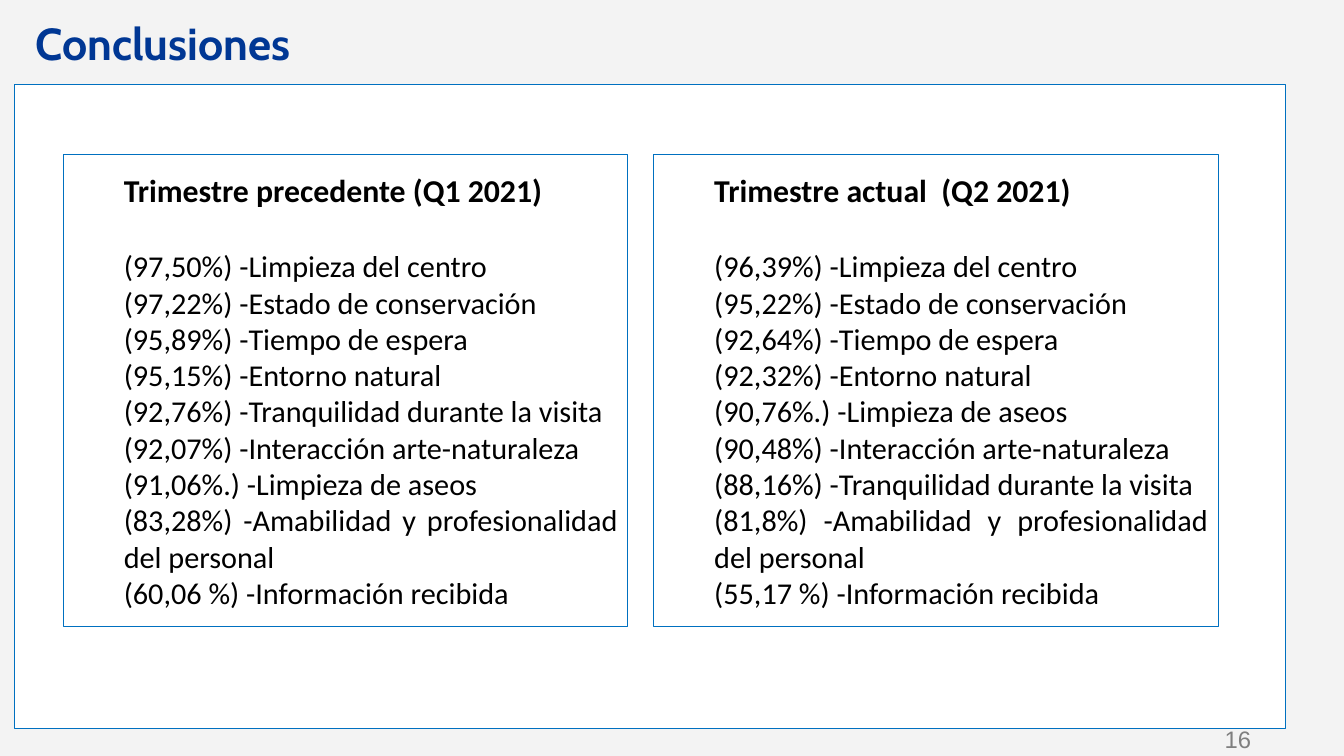
from dataclasses import dataclass

from pptx import Presentation
from pptx import util as u
from pptx.dml.color import RGBColor
from pptx.enum import shapes, text

BACKGROUND = RGBColor(0xF3, 0xF3, 0xF3)
WHITE = RGBColor(0xFF, 0xFF, 0xFF)
BLACK = RGBColor(0, 0, 0)
GRAY = RGBColor(0x7F, 0x7F, 0x7F)
TITLE_BLUE = RGBColor(0x00, 0x37, 0x94)
BORDER_BLUE = RGBColor(0x00, 0x70, 0xC0)

CARD_LEFT, CARD_TOP = 1.6, 3.89
CARD_WIDTH, CARD_HEIGHT = 14.22, 11.89
CARD_PITCH = 14.88
TEXT_INDENT = u.Cm(1.27)


@dataclass
class Quarter:
    heading: str
    results: list[tuple[str, str]]


QUARTERS = [
    Quarter("Trimestre precedente (Q1 2021)", [
        ("97,50%", "Limpieza del centro"),
        ("97,22%", "Estado de conservación"),
        ("95,89%", "Tiempo de espera"),
        ("95,15%", "Entorno natural"),
        ("92,76%", "Tranquilidad durante la visita"),
        ("92,07%", "Interacción arte-naturaleza"),
        ("91,06%.", "Limpieza de aseos"),
        ("83,28%", "Amabilidad y profesionalidad del personal"),
        ("60,06 %", "Información recibida"),
    ]),
    Quarter("Trimestre actual  (Q2 2021)", [
        ("96,39%", "Limpieza del centro"),
        ("95,22%", "Estado de conservación"),
        ("92,64%", "Tiempo de espera"),
        ("92,32%", "Entorno natural"),
        ("90,76%.", "Limpieza de aseos"),
        ("90,48%", "Interacción arte-naturaleza"),
        ("88,16%", "Tranquilidad durante la visita"),
        ("81,8%", "Amabilidad y profesionalidad del personal"),
        ("55,17 %", "Información recibida"),
    ]),
]


def set_font(paragraph, name: str, size: float, color: RGBColor, bold: bool = False) -> None:
    font = paragraph.font
    font.name, font.size, font.bold = name, u.Pt(size), bold
    font.color.rgb = color


def set_margins(frame, horizontal: float, vertical: float) -> None:
    frame.margin_left = frame.margin_right = u.Cm(horizontal)
    frame.margin_top = frame.margin_bottom = u.Cm(vertical)


def add_panel(slide, left: float, top: float, width: float, height: float):
    panel = slide.shapes.add_shape(shapes.MSO_SHAPE.RECTANGLE, u.Cm(left), u.Cm(top),
                                   u.Cm(width), u.Cm(height))
    panel.shadow.inherit = False
    panel.fill.solid()
    panel.fill.fore_color.rgb = WHITE
    panel.line.color.rgb = BORDER_BLUE
    panel.line.width = u.Pt(0.75)
    return panel


def add_quarter(slide, quarter: Quarter, left: float) -> None:
    frame = add_panel(slide, left, CARD_TOP, CARD_WIDTH, CARD_HEIGHT).text_frame
    frame.word_wrap = True
    frame.vertical_anchor = text.MSO_ANCHOR.MIDDLE
    set_margins(frame, 0.25, 0.25)
    lines = [quarter.heading] + [f"({score}) -{topic}" for score, topic in quarter.results]
    for index, line in enumerate(lines):
        is_heading = index == 0
        paragraph = frame.paragraphs[0] if is_heading else frame.add_paragraph()
        paragraph.text = line
        paragraph.alignment = text.PP_ALIGN.JUSTIFY
        paragraph._p.get_or_add_pPr().set("marL", str(TEXT_INDENT))
        set_font(paragraph, "Calibri", 22.7 if is_heading else 21.6, BLACK, is_heading)
        if is_heading:
            paragraph.space_after = u.Pt(28)


def main() -> None:
    presentation = Presentation()
    presentation.slide_width, presentation.slide_height = u.Cm(33.87), u.Cm(19.05)
    slide = presentation.slides.add_slide(presentation.slide_layouts[5])
    slide.background.fill.solid()
    slide.background.fill.fore_color.rgb = BACKGROUND

    # Title
    title = slide.shapes.title
    title.left, title.top, title.width, title.height = u.Cm(0.89), u.Cm(0), u.Cm(32.03), u.Cm(2.13)
    title.text_frame.text = "Conclusiones"
    title.text_frame.vertical_anchor = text.MSO_ANCHOR.MIDDLE
    set_margins(title.text_frame, 0, 0)
    title_paragraph = title.text_frame.paragraphs[0]
    title_paragraph.alignment = text.PP_ALIGN.LEFT
    set_font(title_paragraph, "Cabin", 32, TITLE_BLUE, True)

    # Main panel and the two quarters
    add_panel(slide, 0.36, 2.13, 32.03, 16.23)
    for index, quarter in enumerate(QUARTERS):
        add_quarter(slide, quarter, CARD_LEFT + index * CARD_PITCH)

    # Page number
    number = slide.shapes.add_textbox(u.Cm(23.93), u.Cm(18.11), u.Cm(7.9), u.Cm(1.02)).text_frame
    number.word_wrap = True
    number.vertical_anchor = text.MSO_ANCHOR.MIDDLE
    set_margins(number, 0.3, 0.15)
    number.text = "16"
    number.paragraphs[0].alignment = text.PP_ALIGN.RIGHT
    set_font(number.paragraphs[0], "Arial", 17, GRAY)

    presentation.save("out.pptx")


if __name__ == "__main__":
    main()
